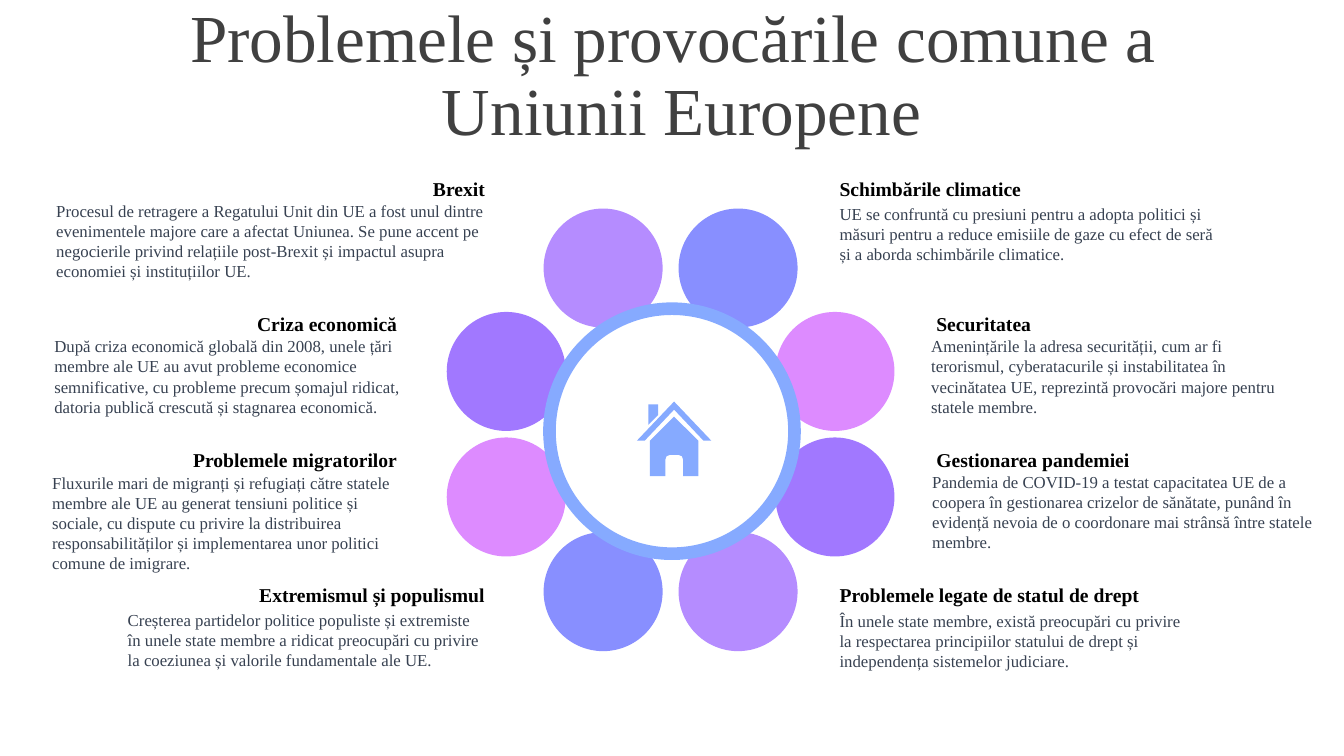
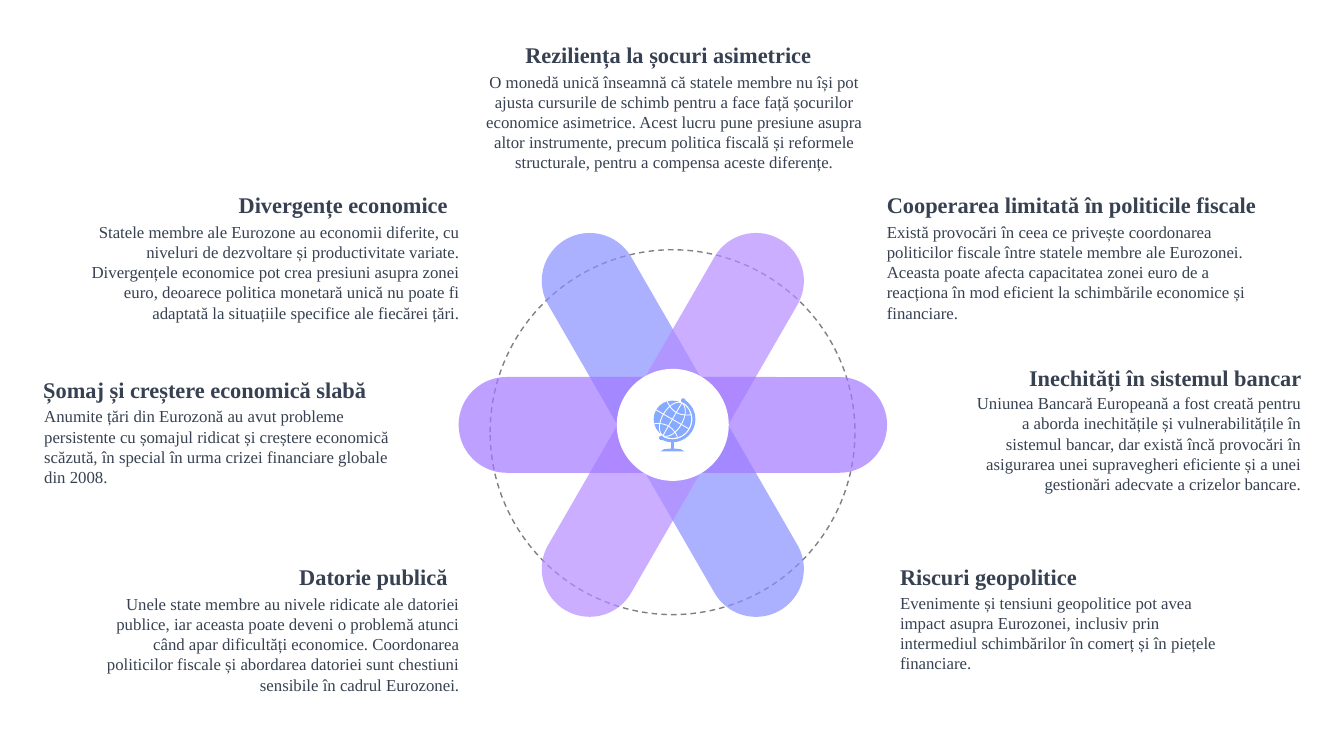
from dataclasses import dataclass
from math import cos, radians, sin

from lxml.etree import SubElement
from pptx import Presentation
from pptx.dml.color import RGBColor
from pptx.enum.dml import MSO_LINE
from pptx.enum.shapes import MSO_SHAPE
from pptx.enum.text import MSO_ANCHOR, MSO_AUTO_SIZE, PP_ALIGN
from pptx.oxml.ns import qn
from pptx.util import Pt

LEFT, CENTER, RIGHT = PP_ALIGN.LEFT, PP_ALIGN.CENTER, PP_ALIGN.RIGHT


@dataclass(frozen=True)
class Theme:
    font: str = "Times New Roman"
    title: str = "404040"
    black: str = "000000"
    text: str = "374151"
    white: str = "FFFFFF"
    gray: str = "808080"
    sky: str = "86AAFF"
    blue: str = "888FFF"
    lilac: str = "B58CFF"
    violet: str = "A178FF"
    pink: str = "DD8BFF"
    title_size: int = 48
    large_size: int = 16
    heading_size: int = 14
    body_size: int = 12


@dataclass(frozen=True)
class Note:
    """A heading with a paragraph, which sits at (dx, dy) from the heading."""
    heading: str
    text: str
    x: float
    y: float
    width: float
    align: PP_ALIGN = LEFT
    dx: float = 0
    dy: float = 21.6
    extra: float = 0
    lines: int = 4


class Deck:
    def __init__(self, theme):
        self.theme = theme
        self.prs = Presentation()
        self.prs.slide_width, self.prs.slide_height = Pt(960), Pt(540)
        self.slide = None

    def new_slide(self, layout):
        self.slide = self.prs.slides.add_slide(self.prs.slide_layouts[layout])

    def run(self, p, text, size, color, bold=False):
        r = p.add_run()
        r.text = text
        r.font.name, r.font.size, r.font.bold = self.theme.font, Pt(size), bold
        r.font.color.rgb = RGBColor.from_string(color)

    def title(self, lines, x, y, w, h):
        sp = self.slide.shapes.title
        sp.left, sp.top, sp.width, sp.height = Pt(x), Pt(y), Pt(w), Pt(h)
        tf = sp.text_frame
        tf.auto_size, tf.vertical_anchor = MSO_AUTO_SIZE.NONE, MSO_ANCHOR.MIDDLE
        p = tf.paragraphs[0]
        p.alignment, p.line_spacing, p.space_before = CENTER, 0.9, Pt(10)
        for i, line in enumerate(lines):
            if i:
                p.add_line_break()
            self.run(p, line, self.theme.title_size, self.theme.title)

    def text(self, text, x, y, w, h, size, color, align, bold=False,
             anchor=MSO_ANCHOR.TOP):
        tf = self.slide.shapes.add_textbox(Pt(x), Pt(y), Pt(w), Pt(h)).text_frame
        tf.word_wrap, tf.vertical_anchor = True, anchor
        tf.auto_size = MSO_AUTO_SIZE.SHAPE_TO_FIT_TEXT
        p = tf.paragraphs[0]
        p.alignment = align
        self.run(p, text, size, color, bold)

    def note(self, note, size, color, body_align, anchor):
        self.text(note.heading, note.x, note.y, note.width, size * 1.2 + 7.5,
                  size, color, note.align, True, anchor)
        self.text(note.text, note.x + note.dx, note.y + note.dy,
                  note.width + note.extra, note.lines * 14.4 + 7.2,
                  self.theme.body_size, self.theme.text, body_align)

    def paint(self, sp, fill=None, line=None, weight=1):
        sp.shadow.inherit = False
        if fill:
            sp.fill.solid()
            sp.fill.fore_color.rgb = RGBColor.from_string(fill)
        else:
            sp.fill.background()
        if line:
            sp.line.color.rgb = RGBColor.from_string(line)
            sp.line.width = Pt(weight)
        else:
            sp.line.fill.background()
        return sp

    def centered(self, kind, cx, cy, w, h, **style):
        sp = self.slide.shapes.add_shape(
            kind, Pt(cx - w / 2), Pt(cy - h / 2), Pt(w), Pt(h))
        return self.paint(sp, **style)

    def circle(self, cx, cy, size, **style):
        return self.centered(MSO_SHAPE.OVAL, cx, cy, size, size, **style)

    def bar(self, cx, cy, w, h, angle, color, opacity):
        sp = self.centered(MSO_SHAPE.ROUNDED_RECTANGLE, cx, cy, w, h, fill=color)
        sp.adjustments[0] = 0.5
        sp.rotation = angle
        clr = sp._element.spPr.find(qn("a:solidFill"))[0]
        SubElement(clr, qn("a:alpha"), val=str(opacity * 1000))

    def outline(self, contours, close=True, **style):
        """Draw one freeform made of several contours."""
        builder = None
        for contour in contours:
            start, *rest = [(Pt(x), Pt(y)) for x, y in contour]
            if builder:
                builder.move_to(*start)
            else:
                builder = self.slide.shapes.build_freeform(*start)
            builder.add_line_segments(rest, close=close)
        return self.paint(builder.convert_to_shape(), **style)

    def house(self, cx, top):
        body = [(0, 10.8), (17.3, 28), (17.3, 53.2), (6.5, 53.2), (6.5, 41.6),
                (5.6, 39.1), (3.2, 38.1), (-3, 38.1), (-5.4, 39.1),
                (-6.3, 41.6), (-6.3, 53.2), (-17.3, 53.2), (-17.3, 28)]
        chimney = [(-18.4, 2), (-11.3, 2), (-11.3, 9.5), (-18.4, 16.7)]
        roof = [(0, 0), (26.6, 28), (21, 28), (0, 5.8), (-21, 28), (-26.6, 28)]
        self.outline([[(cx + x, top + y) for x, y in part]
                      for part in (body, chimney, roof)], fill=self.theme.sky)

    def globe(self, cx, cy, radius, tilt=30):
        sky, c, s = self.theme.sky, cos(radians(tilt)), sin(radians(tilt))

        def turned(x, y):
            return cx + radius * (x * c + y * s), cy + radius * (x * s - y * c)

        def arc(r, angles):
            return [(cx + r * cos(radians(a)), cy + r * sin(radians(a)))
                    for a in angles]

        self.circle(cx, cy, 2 * radius, fill=sky)
        lats = range(-90, 91, 10)
        meridians = [[turned(k * cos(radians(a)), sin(radians(a))) for a in lats]
                     for k in (-0.55, 0, 0.55)]
        steps = [i / 8 for i in range(-8, 9)]
        parallels = [[turned(0.72 * t, side * (0.42 + 0.27 * t * t)) for t in steps]
                     for side in (-1, 1)]
        equator = [turned(-1, 0), turned(1, 0)]
        self.outline(meridians + parallels + [equator], close=False,
                     line=self.theme.white, weight=0.6)
        frame = arc(16.4, range(-60, 121, 6)) + arc(14.3, range(120, -61, -6))
        stem = [(cx - 1.1, cy + 16), (cx + 1.1, cy + 16),
                (cx + 1.1, cy + 21.5), (cx - 1.1, cy + 21.5)]
        base = [(cx - 8.6, cy + 23), (cx - 6, cy + 21.4), (cx, cy + 20.8),
                (cx + 6, cy + 21.4), (cx + 8.6, cy + 23)]
        for part in (frame, stem, base):
            self.outline([part], fill=sky)
        for x, y in arc(15.5, (-60, 121)):
            self.circle(x, y, 3.2, fill=sky)


ROWS = [122.4 + 96.75 * i for i in range(4)]

PROBLEMS = [
    Note("Brexit", "Procesul de retragere a Regatului Unit din UE a fost unul dintre evenimentele majore care a afectat Uniunea. Se pune accent pe negocierile privind relațiile post-Brexit și impactul asupra economiei și instituțiilor UE.",
         25.2, ROWS[0], 328.3, RIGHT, dx=7.9, dy=17.3),
    Note("Criza economică", "După criza economică globală din 2008, unele țări membre ale UE au avut probleme economice semnificative, cu probleme precum șomajul ridicat, datoria publică crescută și stagnarea economică.",
         18, ROWS[1], 272.9, RIGHT, dx=13.7, dy=17.3),
    Note("Problemele migratorilor", "Fluxurile mari de migranți și refugiați către statele membre ale UE au generat tensiuni politice și sociale, cu dispute cu privire la distribuirea responsabilităților și implementarea unor politici comune de imigrare.",
         25.2, ROWS[2], 265.7, RIGHT, dx=5, dy=18, lines=5),
    Note("Extremismul și populismul", "Creșterea partidelor politice populiste și extremiste în unele state membre a ridicat preocupări cu privire la coeziunea și valorile fundamentale ale UE.",
         82.1, ROWS[3], 271.4, RIGHT, dx=2.1, dy=19.4, lines=3),
    Note("Schimbările climatice", "UE se confruntă cu presiuni pentru a adopta politici și măsuri pentru a reduce emisiile de gaze cu efect de seră și a aborda schimbările climatice.",
         592.6, ROWS[0], 284.4, dy=19.4, lines=3),
    Note("Securitatea", "Amenințările la adresa securității, cum ar fi terorismul, cyberatacurile și instabilitatea în vecinătatea UE, reprezintă provocări majore pentru statele membre.",
         661.7, ROWS[1], 272.9, dx=-3.6, dy=17.3),
    Note("Gestionarea pandemiei", "Pandemia de COVID-19 a testat capacitatea UE de a coopera în gestionarea crizelor de sănătate, punând în evidență nevoia de o coordonare mai strânsă între statele membre.",
         661.7, ROWS[2], 288.7, dx=-2.9, dy=17.3),
    Note("Problemele legate de statul de drept", "În unele state membre, există preocupări cu privire la respectarea principiilor statului de drept și independența sistemelor judiciare.",
         592.6, ROWS[3], 265.7, dy=20.1, lines=3),
]

EUROZONE = [
    Note("Reziliența la șocuri asimetrice", "O monedă unică înseamnă că statele membre nu își pot ajusta cursurile de schimb pentru a face față șocurilor economice asimetrice. Acest lucru pune presiune asupra altor instrumente, precum politica fiscală și reformele structurale, pentru a compensa aceste diferențe.",
         337, 25.9, 280.8, CENTER, extra=8.6, lines=5),
    Note("Divergențe economice", "Statele membre ale Eurozone au economii diferite, cu niveluri de dezvoltare și productivitate variate. Divergențele economice pot crea presiuni asupra zonei euro, deoarece politica monetară unică nu poate fi adaptată la situațiile specifice ale fiecărei țări.",
         46.1, 133.2, 280.8, RIGHT, extra=8.6, lines=5),
    Note("Șomaj și creștere economică slabă", "Anumite țări din Eurozonă au avut probleme persistente cu șomajul ridicat și creștere economică scăzută, în special în urma crizei financiare globale din 2008.",
         23.8, 265, 254.9, dx=0.7, extra=8.6),
    Note("Datorie publică", "Unele state membre au nivele ridicate ale datoriei publice, iar aceasta poate deveni o problemă atunci când apar dificultăți economice. Coordonarea politicilor fiscale și abordarea datoriei sunt chestiuni sensibile în cadrul Eurozonei.",
         62.6, 398.9, 264.2, RIGHT, extra=8.6, lines=5),
    Note("Cooperarea limitată în politicile fiscale", "Există provocări în ceea ce privește coordonarea politicilor fiscale între statele membre ale Eurozonei. Aceasta poate afecta capacitatea zonei euro de a reacționa în mod eficient la schimbările economice și financiare.",
         626.4, 133.2, 280.8, lines=5),
    Note("Inechități în sistemul bancar", "Uniunea Bancară Europeană a fost creată pentru a aborda inechitățile și vulnerabilitățile în sistemul bancar, dar există încă provocări în asigurarea unei supravegheri eficiente și a unei gestionări adecvate a crizelor bancare.",
         684, 256.3, 252.7, RIGHT, dy=20.9, lines=5),
    Note("Riscuri geopolitice", "Evenimente și tensiuni geopolitice pot avea impact asupra Eurozonei, inclusiv prin intermediul schimbărilor în comerț și în piețele financiare.",
         635.8, 398.9, 252.7, dy=20.9),
]


def problems_slide(deck):
    t = deck.theme
    deck.new_slide(5)
    deck.title(["Problemele și provocările comune a", " Uniunii Europene"],
               25.2, 26.6, 911.5, 56.9)
    cx = 479
    petals = zip((48.2, 117.4, 117.4, 48.2), (191.5, 265.3, 355, 422.6),
                 (t.lilac, t.violet, t.pink, t.blue),
                 (t.blue, t.pink, t.violet, t.lilac))
    for dx, cy, left_color, right_color in petals:
        deck.circle(cx - dx, cy, 85, fill=left_color)
        deck.circle(cx + dx, cy, 85, fill=right_color)
    deck.circle(480, 308, 175, fill=t.white, line=t.sky, weight=9)
    deck.house(481.5, 286.8)
    for note in PROBLEMS:
        deck.note(note, t.heading_size, t.black, LEFT, MSO_ANCHOR.MIDDLE)


def eurozone_slide(deck):
    t = deck.theme
    deck.new_slide(6)
    orbit = deck.circle(480.4, 308.7, 260.6, line=t.gray)
    orbit.line.dash_style = MSO_LINE.DASH
    cx, cy = 480.6, 303.5
    for angle, color in ((330, t.blue), (30, t.lilac), (90, t.violet)):
        deck.bar(cx, cy, 68.4, 306, angle, color, 70)
    deck.circle(cx, cy, 80, fill=t.white)
    deck.globe(480.3, 299.5, 13.4)
    for note in EUROZONE:
        deck.note(note, t.large_size, t.text, note.align, MSO_ANCHOR.TOP)


def main():
    deck = Deck(Theme())
    problems_slide(deck)
    eurozone_slide(deck)
    deck.prs.save("out.pptx")


if __name__ == "__main__":
    main()
